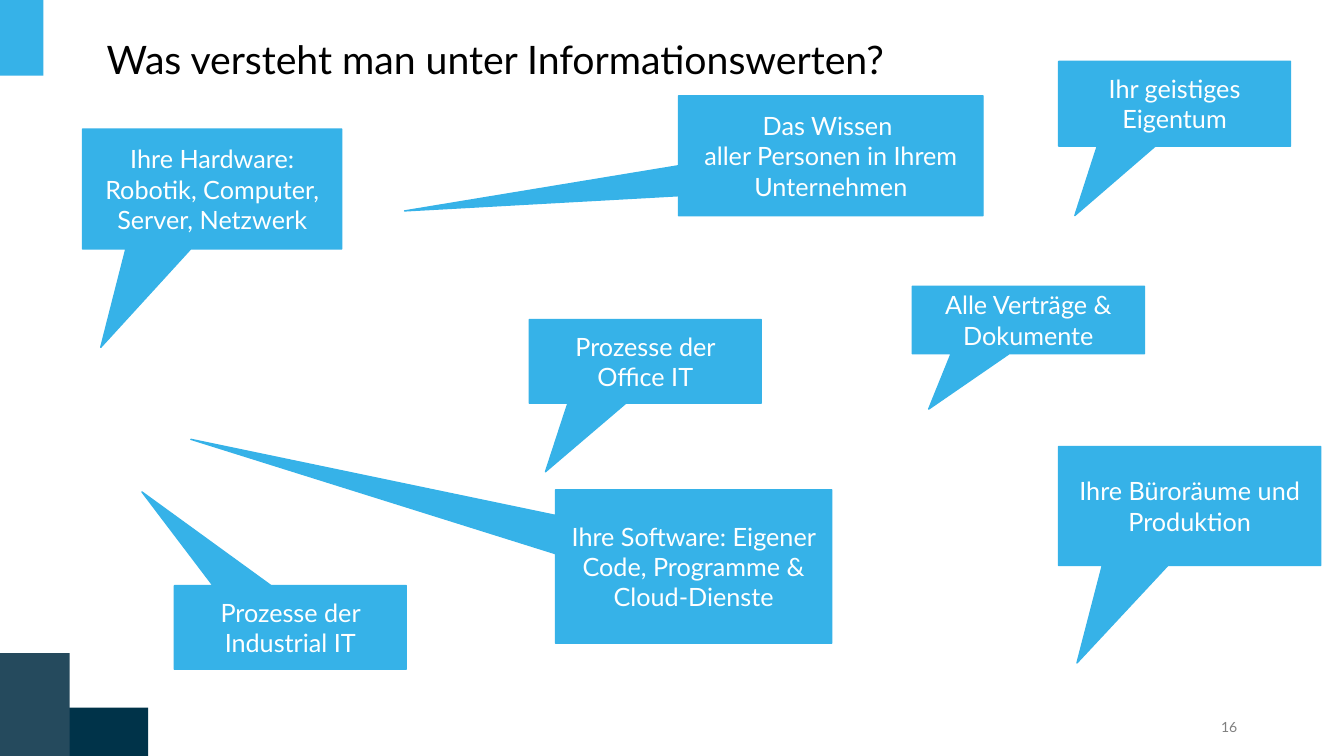
"""Build a slide of callouts naming the information assets of a company."""
from pptx import Presentation
from pptx.dml.color import RGBColor
from pptx.enum.shapes import MSO_SHAPE
from pptx.enum.text import MSO_ANCHOR, PP_ALIGN
from pptx.util import Inches, Pt

SKY = RGBColor(0x36, 0xB2, 0xE8)
NAVY = RGBColor(0x00, 0x33, 0x49)
SLATE = RGBColor(0x25, 0x4A, 0x5D)
GREY = RGBColor(0x7F, 0x7F, 0x7F)
BLACK = RGBColor(0, 0, 0)
WHITE = RGBColor(0xFF, 0xFF, 0xFF)
FONT = "Lato"

TITLE = "Was versteht man unter Informationswerten?"
PAGE_NUMBER = "16"
CORNER_BLOCKS = [
    ((0, 0, 0.43, 0.75), SKY),
    ((0.68, 7.02, 0.79, 0.48), NAVY),
    ((0, 6.48, 0.69, 1.02), SLATE),
]
LOWER_LEFT = (-0.43, 1.32)
CALLOUTS = [
    ("Ihre Hardware: Robotik, Computer, Server, Netzwerk", (0.82, 1.28, 2.57, 1.19), LOWER_LEFT),
    ("Alle Verträge & Dokumente", (9.05, 2.84, 2.3, 0.67), LOWER_LEFT),
    ("Ihr geistiges Eigentum", (10.5, 0.61, 2.3, 0.84), LOWER_LEFT),
    ("Ihre Büroräume und Produktion", (10.5, 4.43, 2.6, 1.18), LOWER_LEFT),
    ("Ihre Software: Eigener Code, Programme & Cloud-Dienste", (5.51, 4.86, 2.74, 1.52), (-1.82, -0.83)),
    ("Das Wissen \naller Personen in Ihrem Unternehmen", (6.73, 0.95, 3.02, 1.19), (-1.4, 0.46)),
    ("Prozesse der Office IT", (5.25, 3.17, 2.3, 0.83), LOWER_LEFT),
    ("Prozesse der Industrial IT", (1.73, 5.81, 2.3, 0.83), (-0.64, -1.62)),
]


def write(shape, text, size, color, align):
    frame = shape.text_frame
    frame.word_wrap = True
    frame.vertical_anchor = MSO_ANCHOR.MIDDLE
    frame.text = text
    for para in frame.paragraphs:
        para.alignment = align
        for span in para.runs:
            span.font.name = FONT
            span.font.size = Pt(size)
            span.font.color.rgb = color


def add_filled(page, kind, place, color):
    shape = page.shapes.add_shape(kind, *map(Inches, place))
    shape.shadow.inherit = False
    shape.fill.solid()
    shape.fill.fore_color.rgb = color
    return shape


def add_callout(page, text, place, tip):
    callout = add_filled(page, MSO_SHAPE.RECTANGULAR_CALLOUT, place, SKY)
    callout.line.color.rgb = SKY
    callout.line.width = Pt(1)
    callout.adjustments[0], callout.adjustments[1] = tip
    write(callout, text, 18, WHITE, PP_ALIGN.CENTER)


def main():
    deck = Presentation()
    deck.slide_width, deck.slide_height = Inches(13.33), Inches(7.5)
    page = deck.slides.add_slide(deck.slide_layouts[6])

    for place, color in CORNER_BLOCKS:
        add_filled(page, MSO_SHAPE.RECTANGLE, place, color).line.fill.background()

    number = page.shapes.add_textbox(Inches(11.35), Inches(7.02), Inches(1.02), Inches(0.39))
    write(number, PAGE_NUMBER, 10, GREY, PP_ALIGN.RIGHT)

    title = page.shapes.add_textbox(Inches(0.96), Inches(0.32), Inches(11.42), Inches(0.59))
    write(title, TITLE, 28, BLACK, PP_ALIGN.LEFT)
    title.text_frame.paragraphs[0].line_spacing = 0.9

    for text, place, tip in CALLOUTS:
        add_callout(page, text, place, tip)

    deck.save("out.pptx")


if __name__ == "__main__":
    main()
